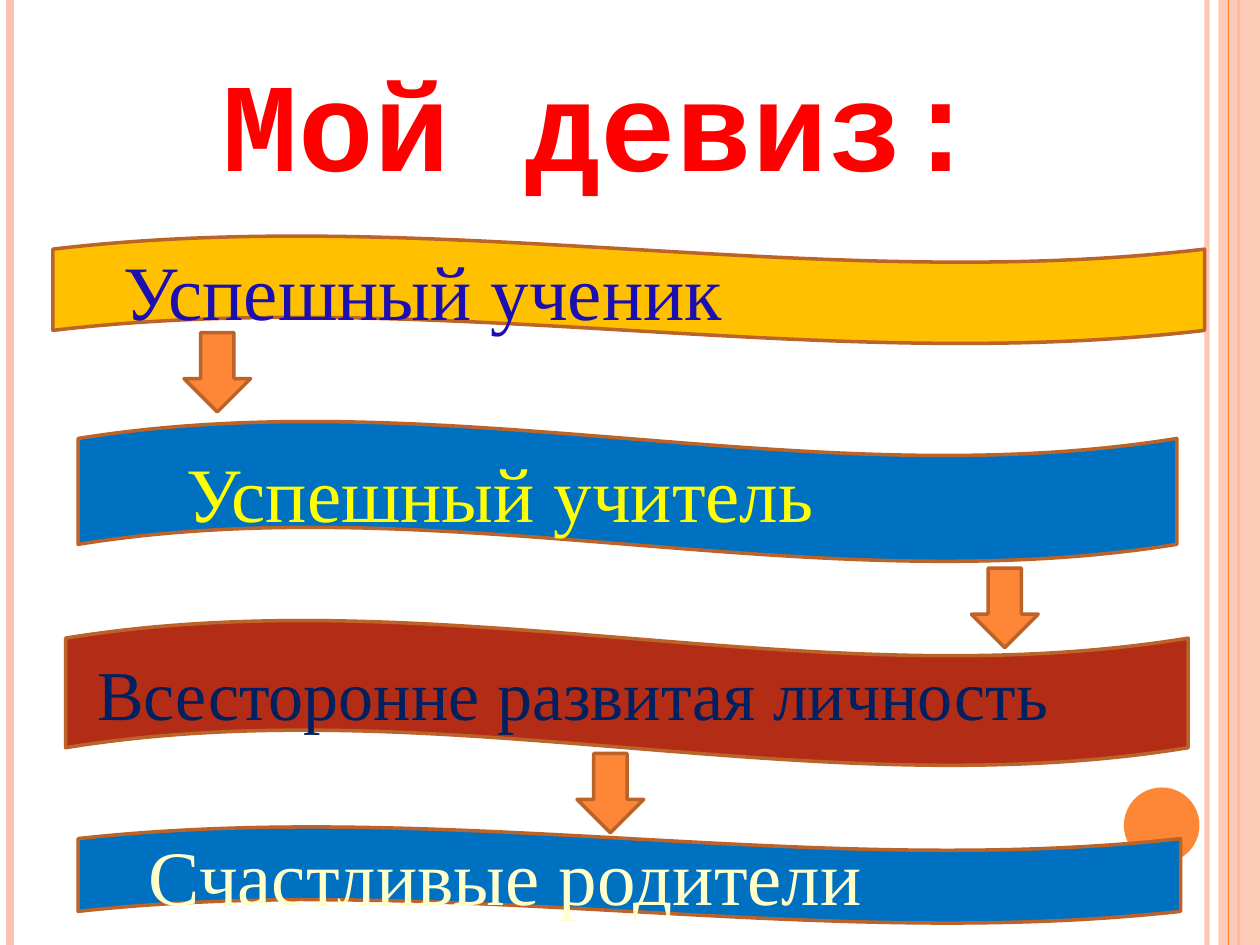
"""Build the motto slide: four wavy banners joined by arrows."""
from lxml import etree
from pptx import Presentation
from pptx import util as u
from pptx.dml.color import RGBColor
from pptx.enum import shapes, text
from pptx.oxml.ns import qn

SHAPE = shapes.MSO_SHAPE
ORANGE, PINK, BROWN = "FE8637", "FEC3AE", "BC6329"


def paint(fmt, color, alpha=100):
    fmt.solid()
    fmt.fore_color.rgb = RGBColor.from_string(color)
    if alpha < 100:
        tint = fmt._xPr.find(qn("a:solidFill"))[0]
        etree.SubElement(tint, qn("a:alpha"), val=str(alpha * 1000))


def write(frame, words, size=44, font="Times New Roman", color="000000",
          bold=False, indent=0.1, anchor=text.MSO_ANCHOR.MIDDLE):
    frame.word_wrap = True
    frame.vertical_anchor = anchor
    frame.margin_left = u.Inches(indent)
    para = frame.paragraphs[0]
    para.alignment = text.PP_ALIGN.LEFT
    run = para.add_run()
    run.text = words
    run.font.size = u.Pt(size)
    run.font.name = font
    run.font.bold = bold
    run.font.color.rgb = RGBColor.from_string(color)


class Deck:
    def __init__(self, line=BROWN, width=2):
        self.line, self.width = line, width
        self.show = Presentation()
        self.show.slide_width = u.Inches(10)
        self.show.slide_height = u.Inches(7.5)
        self.slide = self.show.slides.add_slide(self.show.slide_layouts[6])

    def shape(self, kind, box, fill, edge=True, alpha=100):
        item = self.slide.shapes.add_shape(kind, *map(u.Inches, box))
        item.shadow.inherit = False
        paint(item.fill, fill, alpha)
        if edge:
            paint(item.line.fill, self.line)
            item.line.width = u.Pt(self.width)
        else:
            item.line.fill.background()
        return item

    def rule(self, x, color, width, alpha=100):
        item = self.slide.shapes.add_connector(
            shapes.MSO_CONNECTOR.STRAIGHT, u.Inches(x), 0,
            u.Inches(x), self.show.slide_height)
        paint(item.line.fill, color, alpha)
        item.line.width = u.Pt(width)
        etree.SubElement(item._element.spPr, qn("a:effectLst"))

    def banner(self, box, fill, words, **style):
        wave = self.shape(SHAPE.WAVE, box, fill)
        write(wave.text_frame, words, **style)

    def arrow(self, x, y):
        self.shape(SHAPE.DOWN_ARROW, (x, y, 0.53, 0.63), ORANGE)

    def title(self, box, words, **style):
        frame = self.slide.shapes.add_textbox(*map(u.Inches, box)).text_frame
        write(frame, words, anchor=text.MSO_ANCHOR.TOP, **style)
        frame.auto_size = text.MSO_AUTO_SIZE.SHAPE_TO_FIT_TEXT


def main():
    deck = Deck()
    deck.rule(9.58, PINK, 3, alpha=93)
    deck.rule(0.08, PINK, 4.5)
    deck.rule(9.83, ORANGE, 1.5)
    deck.shape(SHAPE.RECTANGLE, (9.67, 0, 0.33, 7.5), PINK, edge=False, alpha=87)
    deck.rule(9.75, ORANGE, 0.75)
    deck.shape(SHAPE.OVAL, (8.92, 6.25, 0.6, 0.6), ORANGE, edge=False)

    deck.banner((0.42, 1.87, 9.14, 0.86), "FFC000", "Успешный ученик",
                color="1B0FB1", indent=0.56)
    deck.banner((0.62, 3.34, 8.72, 1.12), "0070C0", "Успешный учитель",
                color="FFFF00", indent=0.86)
    deck.banner((0.52, 4.92, 8.91, 1.16), "B32C16", "Всесторонне развитая личность",
                color="002060", size=40, indent=0.25)
    deck.banner((0.62, 6.56, 8.75, 0.77), "0070C0", "Счастливые родители",
                color="FFFFCC", indent=0.56)

    for x, y in ((1.46, 2.64), (7.71, 4.51), (4.58, 5.98)):
        deck.arrow(x, y)
    deck.title((1.67, 0.31, 7.81, 1.31), "Мой девиз:", size=72,
               font="Courier New", color="FF0000", bold=True)
    deck.show.save("out.pptx")


if __name__ == "__main__":
    main()
